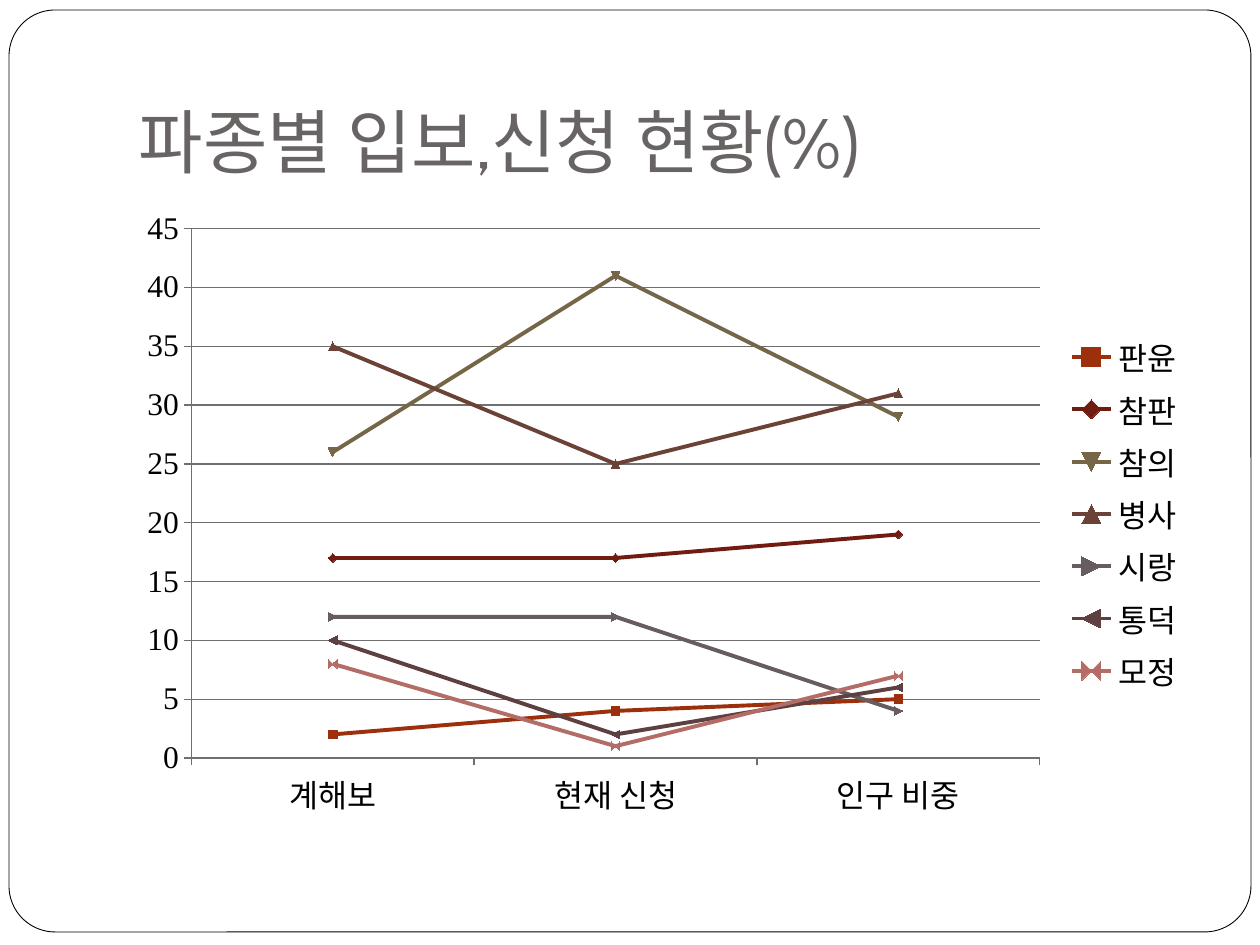
import pptx
import pptx.util
import pptx.dml.color
import pptx.chart.data
import pptx.enum.chart
import pptx.enum.shapes
import pptx.enum.text

SCALE = 914400 / 126
FONT = "Times New Roman"
CATS = ["계해보", "현재 신청", "인구 비중"]
ROWS = [
    ("판윤", (2, 4, 5), "9C300D"),
    ("참판", (17, 17, 19), "701C11"),
    ("참의", (26, 41, 29), "766648"),
    ("병사", (35, 25, 31), "6B4336"),
    ("시랑", (12, 12, 4), "675C5E"),
    ("통덕", (10, 2, 6), "5E4041"),
    ("모정", (8, 1, 7), "B46C66"),
]


def px(num):
    return pptx.util.Emu(round(num * SCALE))


def color(code):
    return pptx.dml.color.RGBColor.from_string(code)


def style(font, size, name, code):
    font.size = pptx.util.Pt(size)
    font.name = name
    font.color.rgb = color(code)


def stroke(line, code, width):
    line.color.rgb = color(code)
    line.width = pptx.util.Pt(width)


def write(slide, box, text, size=18, name=FONT, code="000000"):
    shape = slide.shapes.add_textbox(*map(px, box))
    frame = shape.text_frame
    frame.word_wrap = True
    frame.vertical_anchor = pptx.enum.text.MSO_ANCHOR.BOTTOM
    frame.margin_left = frame.margin_right = frame.margin_bottom = px(13)
    frame.margin_top = px(6)
    run = frame.paragraphs[0].add_run()
    run.text = text
    style(run.font, size, name, code)


def draw_frame(slide, box):
    kind = pptx.enum.shapes.MSO_SHAPE.ROUNDED_RECTANGLE
    shape = slide.shapes.add_shape(kind, *map(px, box))
    shape.adjustments[0] = 0.05
    shape.shadow.inherit = False
    shape.fill.solid()
    shape.fill.fore_color.rgb = color("FFFFFF")
    stroke(shape.line, "000000", 0.5)


def draw_chart(slide, box):
    data = pptx.chart.data.CategoryChartData()
    data.categories = CATS
    for name, vals, _ in ROWS:
        data.add_series(name, vals)
    kind = pptx.enum.chart.XL_CHART_TYPE.LINE_MARKERS
    chart = slide.shapes.add_chart(kind, *map(px, box), data).chart
    style(chart.font, 18, FONT, "000000")
    chart.has_title = False

    # Legend
    chart.has_legend = True
    chart.legend.position = pptx.enum.chart.XL_LEGEND_POSITION.RIGHT
    chart.legend.include_in_layout = False

    # Axes and grid
    for axis in (chart.category_axis, chart.value_axis):
        axis.major_tick_mark = pptx.enum.chart.XL_TICK_MARK.OUTSIDE
        axis.minor_tick_mark = pptx.enum.chart.XL_TICK_MARK.NONE
        stroke(axis.format.line, "6F6F6F", 0.75)
    axis = chart.value_axis
    axis.minimum_scale, axis.maximum_scale, axis.major_unit = 0, 45, 5
    axis.has_major_gridlines = True
    stroke(axis.major_gridlines.format.line, "6F6F6F", 0.75)

    # Series
    plot = chart.plots[0]
    plot.vary_by_categories = False
    for series, (_, _, code) in zip(plot.series, ROWS):
        series.smooth = False
        stroke(series.format.line, code, 2.25)
        series.marker.size = 5
        series.marker.format.fill.solid()
        series.marker.format.fill.fore_color.rgb = color(code)
        stroke(series.marker.format.line, code, 0.75)


def main():
    deck = pptx.Presentation()
    deck.slide_width, deck.slide_height = px(1260), px(945)
    slide = deck.slides.add_slide(deck.slide_layouts[6])
    draw_frame(slide, (9, 10, 1242, 922))
    write(slide, (126, 38, 1071, 157), "파종별 입보,신청 현황(%)",
          size=40, name="Cabin", code="696464")
    draw_chart(slide, (126, 199, 1071, 630))
    deck.save("out.pptx")


if __name__ == "__main__":
    main()
